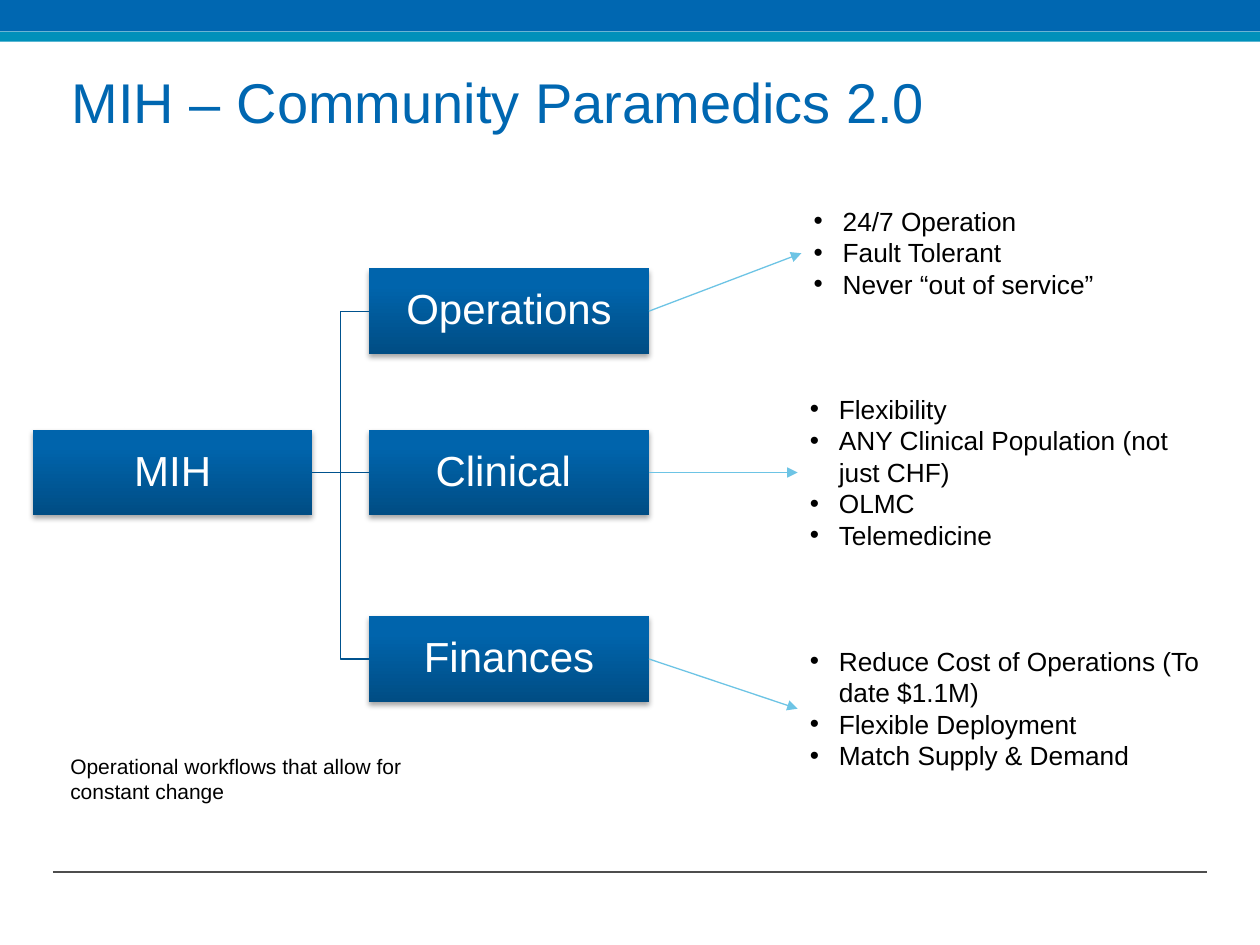
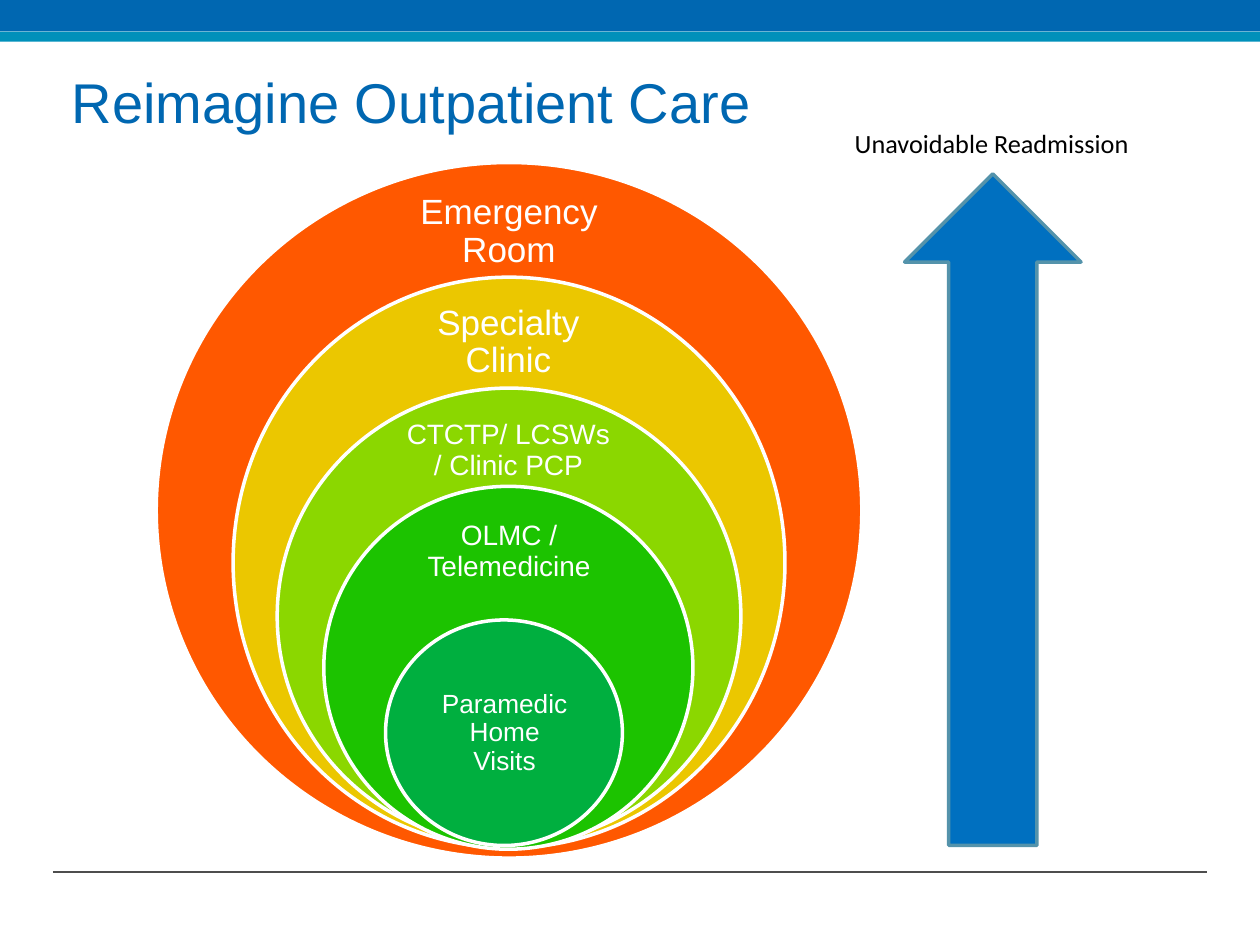
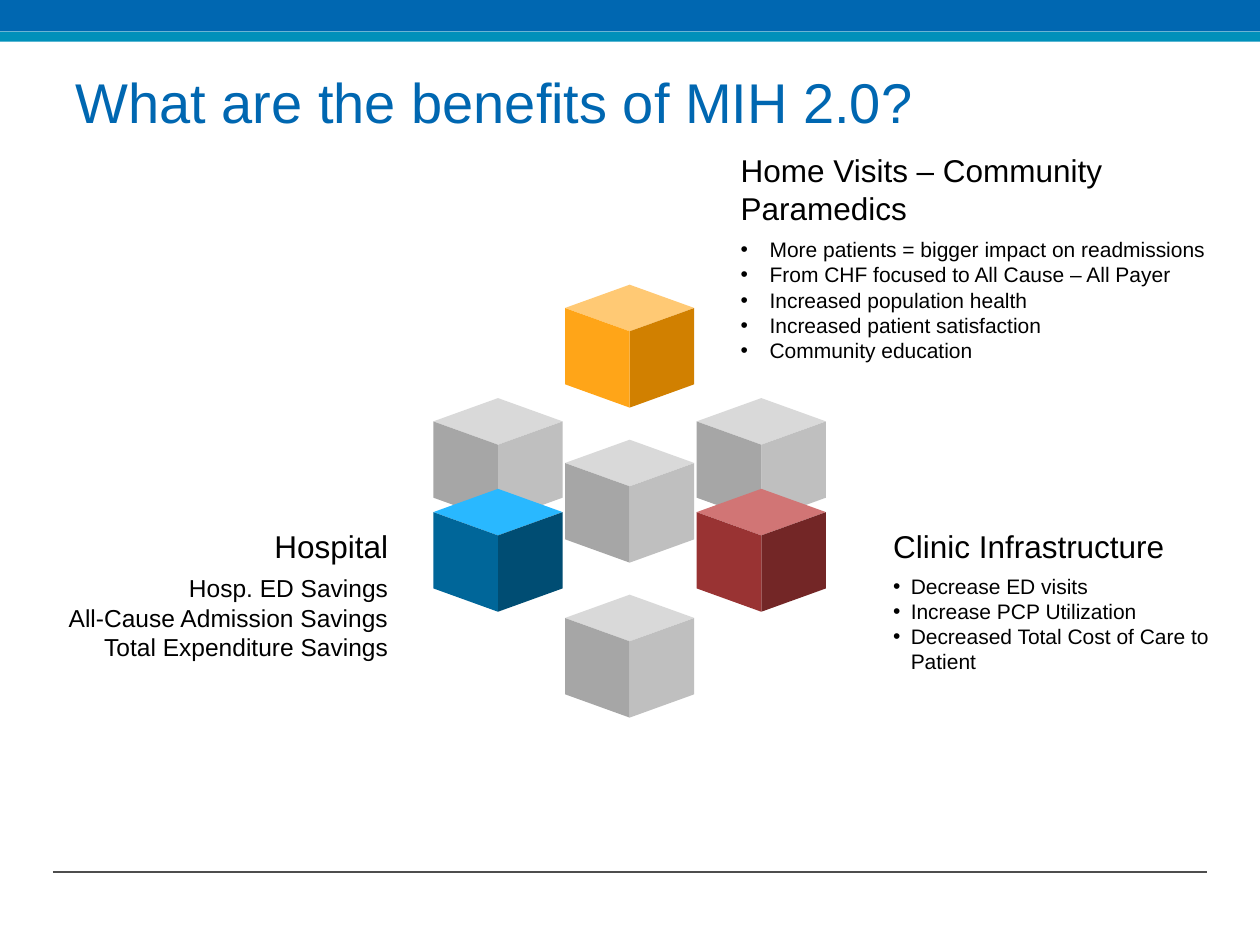
from dataclasses import dataclass

from lxml.etree import SubElement
from pptx import Presentation
from pptx.dml.color import RGBColor
from pptx.enum.shapes import MSO_CONNECTOR, MSO_SHAPE
from pptx.enum.text import MSO_ANCHOR, MSO_AUTO_SIZE, PP_ALIGN
from pptx.oxml.ns import qn
from pptx.util import Inches, Pt

# Grid: 100 columns by 75 rows of square cells
CELL = 0.1
COLUMNS, ROWS = 100, 75

BLACK = RGBColor(0x00, 0x00, 0x00)
WHITE = RGBColor(0xFF, 0xFF, 0xFF)
BLUE = RGBColor(0x00, 0x67, 0xB1)
TEAL = RGBColor(0x00, 0x90, 0xBA)
FOOT_GRAY = RGBColor(0x4D, 0x4D, 0x4D)
BOX_DARK = RGBColor(0x00, 0x4D, 0x84)
BOX_LIGHT = RGBColor(0x00, 0x64, 0xAC)
BRANCH_BLUE = RGBColor(0x00, 0x52, 0x8E)
ARROW_BLUE = RGBColor(0x6D, 0xC4, 0xE5)
UP_FILL = RGBColor(0x00, 0x70, 0xC0)
UP_LINE = RGBColor(0x54, 0x93, 0xAB)
RING_COLORS = [RGBColor.from_string(code) for code in
               ("FF5800", "EBC700", "8BD700", "1CC300", "00AF3F")]
# Cube faces: top, right, left
GRAY_CUBE, ORANGE_CUBE, RED_CUBE, BLUE_CUBE = (
    [RGBColor.from_string(code) for code in faces] for faces in (
        ("D9D9D9", "BFBFBF", "A6A6A6"), ("FFC974", "D18000", "FFA518"),
        ("D17575", "732626", "993333"), ("29B8FF", "004D73", "006699")))


@dataclass
class Box:
    """A rectangle measured in grid cells."""
    left: float
    top: float
    width: float
    height: float

    def inner(self, column, row, width, height):
        return Box(self.left + column, self.top + row, width, height)

    def point(self, column, row):
        return cells(self.left + column), cells(self.top + row)

    def lengths(self):
        return [cells(n) for n in (self.left, self.top, self.width, self.height)]


def cells(count):
    return Inches(count * CELL)


# Shared drawing helpers

def write(text_frame, lines, size, color=BLACK, align=PP_ALIGN.LEFT,
          indent=0, spacing=None, font="Arial"):
    text_frame.word_wrap = True
    text_frame.text = "\n".join(lines)
    for paragraph in text_frame.paragraphs:
        paragraph.alignment = align
        paragraph.line_spacing = spacing
        if indent:
            properties = paragraph._p.get_or_add_pPr()
            properties.set("marL", str(Inches(indent)))
            properties.set("indent", str(-Inches(indent)))
            SubElement(properties, qn("a:buFont")).set("typeface", "Arial")
            SubElement(properties, qn("a:buChar")).set("char", "•")
        for run in paragraph.runs:
            run.font.name = font
            run.font.size = Pt(size)
            run.font.color.rgb = color


def add_text(slide, box, lines, size, **style):
    shape = slide.shapes.add_textbox(*box.lengths())
    write(shape.text_frame, lines, size, **style)
    return shape


def set_side_margins(text_frame, side, vertical=0):
    text_frame.margin_left = text_frame.margin_right = Inches(side)
    text_frame.margin_top = text_frame.margin_bottom = Inches(vertical)


def paint(shape, fill, line=None):
    shape.shadow.inherit = False
    shape.fill.solid()
    shape.fill.fore_color.rgb = fill
    if line is None:
        shape.line.fill.background()
    else:
        shape.line.color.rgb = line
        shape.line.width = Pt(2)


def add_shape(slide, kind, box, fill, line=None):
    shape = slide.shapes.add_shape(kind, *box.lengths())
    paint(shape, fill, line)
    return shape


def add_line(slide, color, kind=MSO_CONNECTOR.STRAIGHT, start=(0, 0), end=(0, 0),
             arrow=False):
    line = slide.shapes.add_connector(kind, *start, *end)
    line.line.color.rgb = color
    line.line.width = Pt(0.75)
    properties = line._element.spPr
    if arrow:
        SubElement(properties.find(qn("a:ln")), qn("a:tailEnd")).set("type", "triangle")
    SubElement(properties, qn("a:effectLst"))
    return line


def join(slide, first, second, color, **style):
    line = add_line(slide, color, **style)
    line.begin_connect(first, 3)
    line.end_connect(second, 1)


# Frame and title

def add_slide(presentation, title, inset=0.07):
    slide = presentation.slides.add_slide(presentation.slide_layouts[5])
    page = Box(0, 0, COLUMNS, ROWS)
    add_line(slide, FOOT_GRAY, start=page.point(4.2, 69.2), end=page.point(95.8, 69.2))
    add_shape(slide, MSO_SHAPE.RECTANGLE, page.inner(0, 0, COLUMNS, 2.5), BLUE)
    add_shape(slide, MSO_SHAPE.RECTANGLE, page.inner(0, 2.5, COLUMNS, 0.8), TEAL)

    heading = slide.shapes.title
    heading.left, heading.top, heading.width, heading.height = (
        page.inner(5, 3.3, 90, 9.4).lengths())
    text_frame = heading.text_frame
    write(text_frame, [title], 32, color=BLUE)
    text_frame.auto_size = MSO_AUTO_SIZE.NONE
    text_frame.vertical_anchor = MSO_ANCHOR.MIDDLE
    set_side_margins(text_frame, inset, 0.04)
    return slide, page


# Slide 1: program tree

def add_tree_box(slide, box, label):
    shape = add_shape(slide, MSO_SHAPE.RECTANGLE, box, BOX_LIGHT)
    shape.fill.gradient()
    shape.fill.gradient_angle = 90
    for stop, position, color in zip(shape.fill.gradient_stops, (0, 0.8),
                                     (BOX_DARK, BOX_LIGHT)):
        stop.position = position
        stop.color.rgb = color
    # Soft shadow below the box
    effects = shape._element.spPr.find(qn("a:effectLst"))
    shadow = SubElement(effects, qn("a:outerShdw"), blurRad=str(Pt(3.1)),
                        dist=str(Pt(1.8)), dir="5400000", rotWithShape="0")
    color = SubElement(shadow, qn("a:srgbClr"), val="000000")
    SubElement(color, qn("a:alpha"), val="35000")

    write(shape.text_frame, [label], 24, color=WHITE, align=PP_ALIGN.CENTER, spacing=0.9)
    shape.text_frame.vertical_anchor = MSO_ANCHOR.MIDDLE
    set_side_margins(shape.text_frame, 0.02, 0.02)
    return shape


def add_tree(slide, box, root_label, branches):
    width, height, root_row = 22.2, 6.8, 18.3
    root = add_tree_box(slide, box.inner(0, root_row, width, height), root_label)
    for label, row, list_place, items in branches:
        branch = add_tree_box(slide, box.inner(26.7, row, width, height), label)
        kind = MSO_CONNECTOR.STRAIGHT if row == root_row else MSO_CONNECTOR.ELBOW
        join(slide, root, branch, BRANCH_BLUE, kind=kind)
        details = add_text(slide, box.inner(*list_place), items, 15, indent=0.23)
        join(slide, branch, details, ARROW_BLUE, arrow=True)


def build_program_slide(presentation):
    slide, page = add_slide(presentation, "MIH – Community Paramedics 2.0")
    add_tree(slide, page.inner(2.6, 15.8, 94.8, 46), "MIH", [
        ("Operations", 5.5, (61, 0, 33.8, 8.6),
         ["24/7 Operation", "Fault Tolerant", "Never “out of service”"]),
        ("Clinical ", 18.3, (60.7, 14.9, 34, 13.6),
         ["Flexibility", "ANY Clinical Population (not just CHF)", "OLMC",
          "Telemedicine"]),
        ("Finances", 33.1, (60.7, 34.9, 34, 11.1),
         ["Reduce Cost of Operations (To date $1.1M)", "Flexible Deployment",
          "Match Supply & Demand"]),
    ])
    add_text(slide, page.inner(4.6, 59.3, 29.4, 5),
             ["Operational workflows that allow for constant change"], 12)


# Slide 2: nested levels of care

def add_rings(slide, box, rings):
    for color, (circle, label_place, label, size) in zip(RING_COLORS, rings):
        add_shape(slide, MSO_SHAPE.OVAL, box.inner(*circle), color, WHITE)
        caption = add_text(slide, box.inner(*label_place), [label], size, color=WHITE,
                           align=PP_ALIGN.CENTER, spacing=0.9)
        caption.text_frame.vertical_anchor = MSO_ANCHOR.MIDDLE
        set_side_margins(caption.text_frame, size * 0.008)


def add_readmission_arrow(slide, box):
    add_text(slide, box.inner(0, 0, box.width, 3.5), ["Unavoidable Readmission"], 15,
             align=PP_ALIGN.CENTER, font="Calibri")
    add_shape(slide, MSO_SHAPE.UP_ARROW, box.inner(6.2, 4.2, 14, box.height - 4.2),
              UP_FILL, UP_LINE)


def build_care_slide(presentation):
    slide, page = add_slide(presentation, "Reimagine Outpatient Care")
    add_rings(slide, page.inner(12.4, 12.9, 56, 55.2), [
        ((0, 0, 56, 55.2), (17.5, 2.8, 21, 5.5), "Emergency Room", 20),
        ((6.1, 9.1, 43.8, 45.3), (18.5, 11.7, 18.9, 5.2), "Specialty Clinic", 20),
        ((9.6, 17.9, 36.8, 36.2), (18.4, 20.4, 19.1, 5), "CTCTP/ LCSWs / Clinic PCP", 16),
        ((13.3, 25.7, 29.3, 28.8), (20.1, 28.3, 15.8, 5.2), "OLMC / Telemedicine", 16),
        ((18.2, 36.3, 18.8, 17.9), (21, 40.8, 13.3, 9), "Paramedic Home Visits", 15),
    ])
    add_readmission_arrow(slide, page.inner(65.6, 9.6, 26.2, 57.5))


# Slide 3: benefits around a stack of cubes

def add_benefit(slide, box, heading, heading_rows, items, size, **style):
    align = style.get("align", PP_ALIGN.LEFT)
    add_text(slide, box.inner(0, 0, box.width, heading_rows), [heading], 18, align=align)
    body_row = heading_rows - 0.3
    add_text(slide, box.inner(0, body_row, box.width, box.height - body_row), items, size,
             **style)


def add_cube(slide, box, colors):
    middle, right = box.width / 2, box.width
    slope, bottom = 1.85, box.height
    back, front, base = (middle, 0), (middle, 2 * slope), (middle, bottom)
    left_top, left_base = (0, slope), (0, bottom - slope)
    right_top, right_base = (right, slope), (right, bottom - slope)
    faces = [(back, right_top, front, left_top),
             (right_top, right_base, base, front),
             (left_top, front, base, left_base)]
    for corners, color in zip(faces, colors):
        first, *others = [box.point(*corner) for corner in corners]
        builder = slide.shapes.build_freeform(*first, scale=1.0)
        builder.add_line_segments(others, close=True)
        paint(builder.convert_to_shape(), color)


def add_cubes(slide, box):
    # Column number and row offset of each cube, back to front
    pitch, rise = 10.45, 12.3
    side_back, side_front = 9, 16.2
    for column, row, colors in [
            (2, side_back, GRAY_CUBE), (0, side_back, GRAY_CUBE),
            (1, 0, ORANGE_CUBE), (1, 2 * rise, GRAY_CUBE), (1, rise, GRAY_CUBE),
            (2, side_front, RED_CUBE), (0, side_front, BLUE_CUBE)]:
        add_cube(slide, box.inner(column * pitch, row, 10.25, 9.75), colors)


def build_benefits_slide(presentation):
    slide, page = add_slide(presentation, "What are the benefits of MIH 2.0?", inset=0.1)
    add_benefit(slide, page.inner(0.8, 41.3, 31, 14.1), "Hospital", 4,
                ["Hosp. ED Savings", "All-Cause Admission Savings",
                 "Total Expenditure Savings"], 14, align=PP_ALIGN.RIGHT)
    add_benefit(slide, page.inner(69.9, 41.3, 28.6, 12.8), "Clinic Infrastructure", 4,
                ["Decrease ED visits", "Increase PCP Utilization",
                 "Decreased Total Cost of Care to Patient"], 12, indent=0.14)
    add_benefit(slide, page.inner(57.8, 11.5, 41.3, 20), "Home Visits – Community Paramedics",
                7.1, ["More patients = bigger impact on readmissions",
                      "From CHF focused to All Cause – All Payer",
                      "Increased population health", "Increased patient satisfaction",
                      "Community education"], 12, indent=0.23)
    add_cubes(slide, page.inner(34.4, 22.6, 31.2, 34.4))


def main():
    presentation = Presentation()
    presentation.slide_width = cells(COLUMNS)
    presentation.slide_height = cells(ROWS)
    build_program_slide(presentation)
    build_care_slide(presentation)
    build_benefits_slide(presentation)
    presentation.save("out.pptx")


if __name__ == "__main__":
    main()
